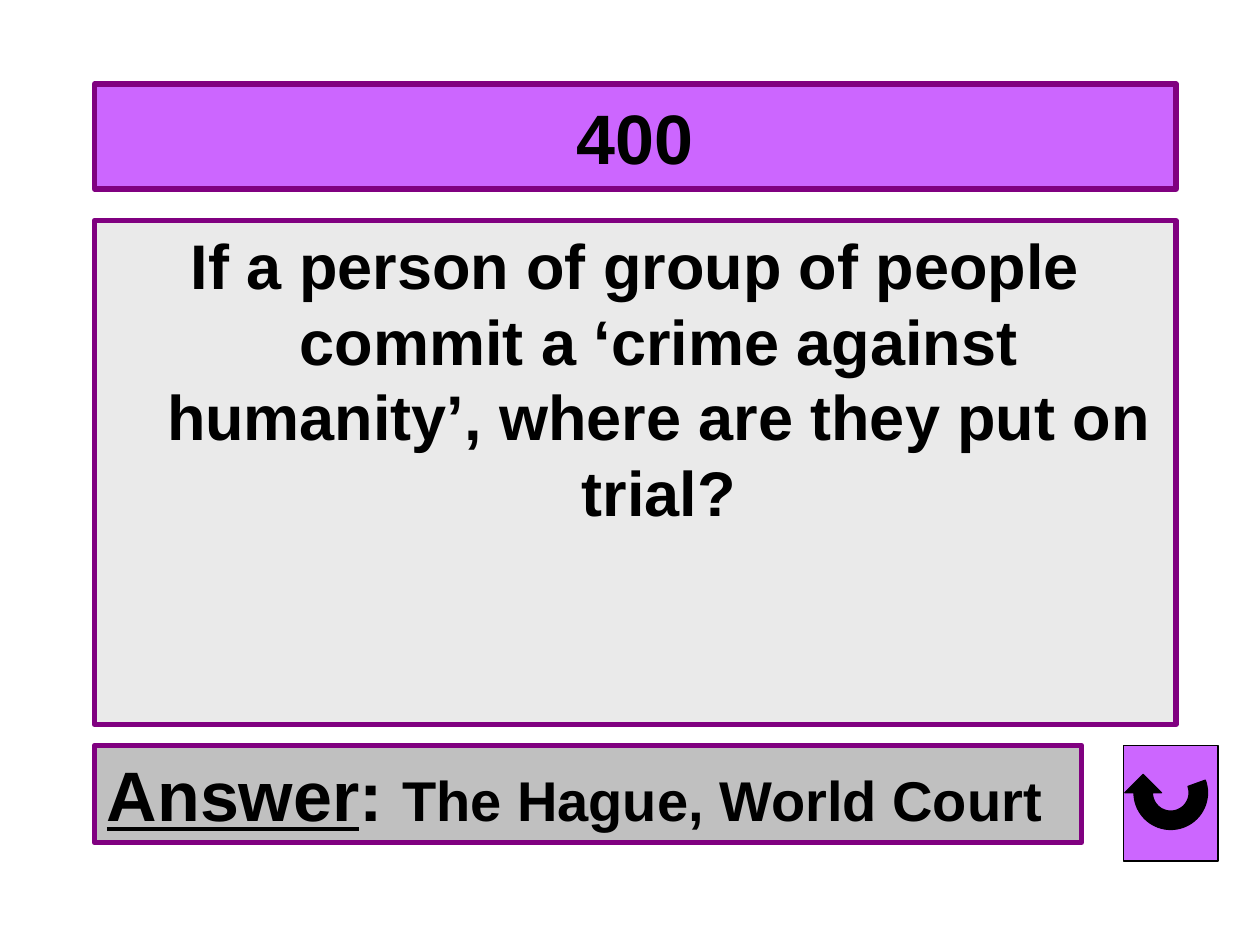
import math
from dataclasses import dataclass

import pptx
import pptx.dml.color
import pptx.enum.shapes
import pptx.enum.text
import pptx.util

PX = 9525  # EMU per px, 96 px to the inch
ALIGN = pptx.enum.text.PP_ALIGN
ANCHOR = pptx.enum.text.MSO_ANCHOR
RECTANGLE = pptx.enum.shapes.MSO_SHAPE.RECTANGLE
PURPLE, VIOLET, BLACK = "800080", "CC66FF", "000000"


@dataclass
class Panel:
    left: int
    top: int
    width: int
    height: int
    fill: str
    line: str = PURPLE
    line_width: float = 3


HEADING = Panel(72, 64, 824, 80, VIOLET)
QUESTION = Panel(72, 168, 824, 384, "EAEAEA")
ANSWER = Panel(72, 568, 752, 74, "C0C0C0")
BUTTON = Panel(856, 568, 72, 88, VIOLET, BLACK, 0.75)


def px(length: int) -> pptx.util.Emu:
    return pptx.util.Emu(length * PX)


def rgb(value: str) -> pptx.dml.color.RGBColor:
    return pptx.dml.color.RGBColor.from_string(value)


def paint(shape, fill: str, line: str, line_width: float) -> None:
    shape.fill.solid()
    shape.fill.fore_color.rgb = rgb(fill)
    shape.line.color.rgb = rgb(line)
    shape.line.width = pptx.util.Pt(line_width)


def place(shape, panel: Panel) -> None:
    shape.left, shape.top = px(panel.left), px(panel.top)
    shape.width, shape.height = px(panel.width), px(panel.height)
    paint(shape, panel.fill, panel.line, panel.line_width)


def add_panel(shapes, panel: Panel):
    shape = shapes.add_shape(RECTANGLE, 0, 0, 0, 0)
    shape.shadow.inherit = False
    place(shape, panel)
    return shape


def write(shape, text: str, *, size: int, underline: bool = False,
          align=ALIGN.CENTER, anchor=ANCHOR.TOP) -> None:
    """Append a bold run to the first paragraph of a shape."""
    frame = shape.text_frame
    frame.word_wrap = True
    frame.vertical_anchor = anchor
    paragraph = frame.paragraphs[0]
    paragraph.alignment = align
    paragraph.space_before = pptx.util.Pt(0)
    run = paragraph.add_run()
    run.text = text
    run.font.name = "Arial"
    run.font.size = pptx.util.Pt(size)
    run.font.bold = True
    run.font.underline = underline
    run.font.color.rgb = rgb(BLACK)


def arc(center: tuple[int, int], radius: int, start: int, end: int) -> list:
    """Points along an arc, in EMU, with angles in degrees clockwise."""
    steps = 40
    angles = [math.radians(start + (end - start) * i / steps) for i in range(steps + 1)]
    return [(round((center[0] + radius * math.cos(a)) * PX),
             round((center[1] + radius * math.sin(a)) * PX)) for a in angles]


def add_return_arrow(shapes) -> None:
    center = (892, 604)
    head = [(px(x), px(y)) for x, y in ((857, 604), (871, 590), (885, 604))]
    outline = arc(center, 14, 180, -20) + arc(center, 28, -20, 180) + head
    builder = shapes.build_freeform(*outline[0], scale=1.0)
    builder.add_line_segments(outline[1:], close=True)
    arrow = builder.convert_to_shape()
    arrow.shadow.inherit = False
    paint(arrow, BLACK, BLACK, 0.75)


def main() -> None:
    deck = pptx.Presentation()
    deck.slide_width, deck.slide_height = px(960), px(720)
    slide = deck.slides.add_slide(deck.slide_layouts[5])

    # Points heading
    heading = slide.shapes.title
    place(heading, HEADING)
    write(heading, "400", size=40, anchor=ANCHOR.MIDDLE)

    # Question with a hanging indent
    question = add_panel(slide.shapes, QUESTION)
    write(question, "If a person of group of people commit a ‘crime against "
          "humanity’, where are they put on trial?", size=36)
    properties = question.text_frame.paragraphs[0]._p.get_or_add_pPr()
    properties.set("marL", str(px(36)))
    properties.set("indent", str(px(-36)))

    # Answer
    answer = add_panel(slide.shapes, ANSWER)
    write(answer, "Answer", size=40, underline=True, align=ALIGN.LEFT)
    write(answer, ": ", size=40, align=ALIGN.LEFT)
    write(answer, "The Hague, World Court", size=32, align=ALIGN.LEFT)

    # Return button
    button = slide.shapes.add_group_shape()
    add_panel(button.shapes, BUTTON)
    add_return_arrow(button.shapes)

    deck.save("out.pptx")


if __name__ == "__main__":
    main()
